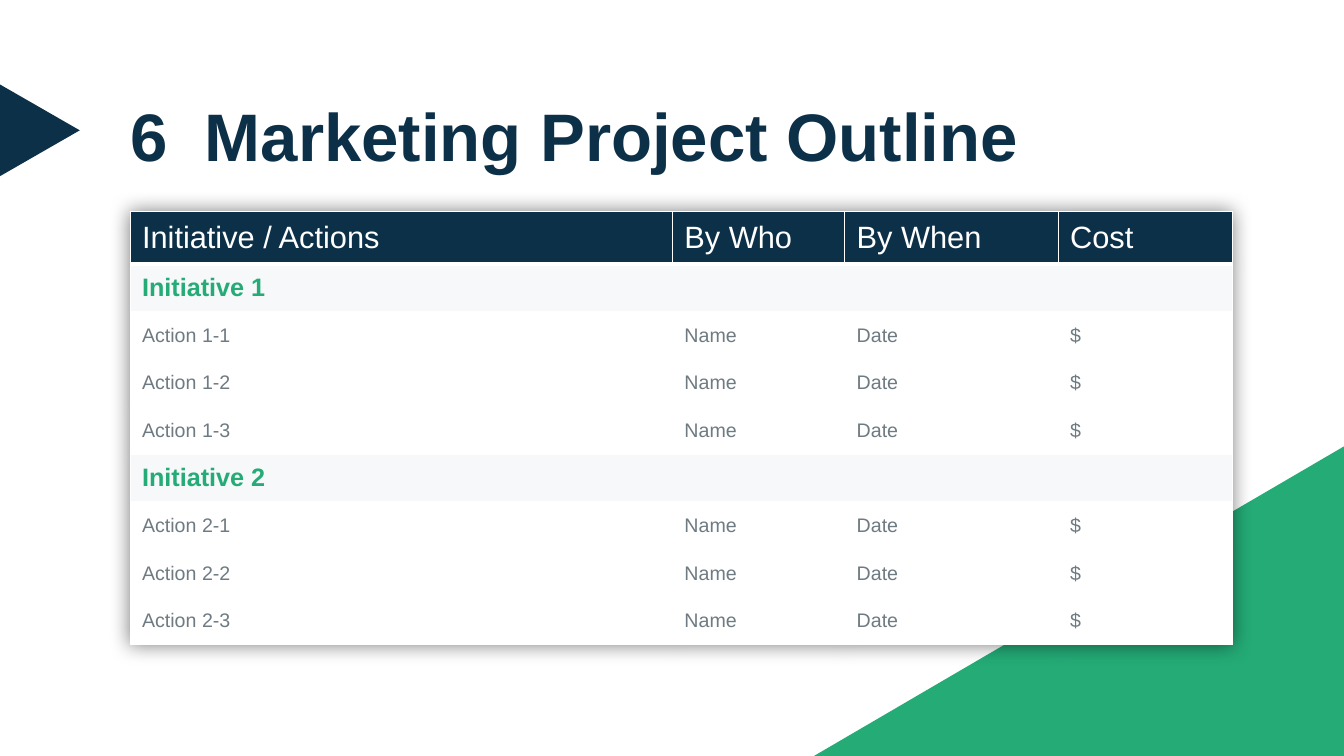
import dataclasses

import pptx
import pptx.dml.color
import pptx.enum.shapes
import pptx.enum.text
import pptx.oxml
import pptx.oxml.ns
import pptx.util
from pptx.util import Cm


@dataclasses.dataclass(frozen=True)
class Theme:
    font: str = "Arial"
    navy: str = "0D3049"
    green: str = "24AB76"
    grey: str = "6E7B82"
    pale: str = "F6F8FA"
    white: str = "FFFFFF"
    title_size: int = 48
    header_size: int = 22
    initiative_size: int = 18
    action_size: int = 14


@dataclasses.dataclass(frozen=True)
class Box:
    """Left, top, width and height in centimetres."""
    left: float
    top: float
    width: float
    height: float

    def lengths(self):
        return [Cm(value) for value in dataclasses.astuple(self)]


THEME = Theme()
SLIDE = Box(0, 0, 33.87, 19.05)
HEADERS = ["Initiative / Actions", "By Who", "By When", "Cost"]
COLUMN_WIDTHS = [13.67, 4.34, 5.38, 4.39]
HEADER_HEIGHT = 1.32
INITIATIVES = 2
ACTIONS = 3


def rgb(color):
    return pptx.dml.color.RGBColor.from_string(color)


def apply(target, formats):
    for name, value in formats.items():
        setattr(target, name, value)


def write(paragraph, text, size, color, bold=False):
    run = paragraph.add_run()
    run.text = text
    apply(run.font, {"name": THEME.font, "size": pptx.util.Pt(size), "bold": bold})
    run.font.color.rgb = rgb(color)


def make_element(xml):
    return pptx.oxml.parse_xml(xml.replace(" ", f' {pptx.oxml.ns.nsdecls("a")} ', 1))


# Triangles at the slide edges
def add_triangle(slide, box, preset, color):
    shape = slide.shapes.add_shape(preset, *box.lengths())
    shape.shadow.inherit = False
    shape.fill.solid()
    shape.fill.fore_color.rgb = rgb(color)
    shape.line.fill.background()
    return shape


def add_corner(slide, box):
    preset = pptx.enum.shapes.MSO_SHAPE.RIGHT_TRIANGLE
    corner = add_triangle(slide, box, preset, THEME.green)
    corner.element.spPr.xfrm.set("flipH", "1")


def add_pointer(slide, box):
    # A quarter turn swaps the sides about the centre of the box
    shift = (box.width - box.height) / 2
    upright = Box(box.left + shift, box.top - shift, box.height, box.width)
    preset = pptx.enum.shapes.MSO_SHAPE.ISOSCELES_TRIANGLE
    add_triangle(slide, upright, preset, THEME.navy).rotation = 90


# Title with its section number
def add_title(slide, box, number, text):
    title = slide.shapes.title
    apply(title, dict(zip(("left", "top", "width", "height"), box.lengths())))
    apply(title.text_frame, {
        "margin_left": 0, "margin_top": 0, "margin_right": 0, "margin_bottom": 0,
        "word_wrap": True,
        "auto_size": pptx.enum.text.MSO_AUTO_SIZE.NONE,
        "vertical_anchor": pptx.enum.text.MSO_ANCHOR.BOTTOM,
    })
    paragraph = title.text_frame.paragraphs[0]
    apply(paragraph, {"alignment": pptx.enum.text.PP_ALIGN.LEFT, "line_spacing": 0.9})
    tabs = f'<a:tabLst ><a:tab pos="{Cm(1.88)}" algn="l"/></a:tabLst>'
    paragraph.line_spacing = 0.9
    paragraph._p.get_or_add_pPr().append(make_element(tabs))
    write(paragraph, f"{number}\t{text}", THEME.title_size, THEME.navy, True)


# Table of initiatives and their actions
def format_cell(cell, fill, top=1, bottom=1):
    apply(cell, {
        "margin_left": Cm(0.3), "margin_right": Cm(0.3),
        "margin_top": Cm(0.15), "margin_bottom": Cm(0.15),
        "vertical_anchor": pptx.enum.text.MSO_ANCHOR.MIDDLE,
    })
    cell.fill.solid()
    cell.fill.fore_color.rgb = rgb(fill)
    properties = cell._tc.get_or_add_tcPr()
    for index, (side, width) in enumerate(zip("LRTB", (1, 1, top, bottom))):
        properties.insert(index, make_element(
            f'<a:ln{side} w="{pptx.util.Pt(width)}"><a:solidFill>'
            f'<a:srgbClr val="{THEME.white}"/></a:solidFill></a:ln{side}>'))


def add_table_shadow(table):
    table._tbl.tblPr.insert(0, make_element(
        f'<a:effectLst ><a:outerShdw blurRad="{Cm(0.5)}" dist="0" algn="ctr" rotWithShape="0">'
        '<a:srgbClr val="000000"><a:alpha val="50000"/></a:srgbClr>'
        '</a:outerShdw></a:effectLst>'))


def add_outline_table(slide, box):
    rows = [(HEADERS, THEME.header_size, THEME.white, False, THEME.navy)]
    for initiative in range(1, INITIATIVES + 1):
        rows.append(([f"Initiative {initiative}"], THEME.initiative_size,
                     THEME.green, True, THEME.pale))
        for action in range(1, ACTIONS + 1):
            rows.append(([f"Action {initiative}-{action}", "Name", "Date", "$"],
                         THEME.action_size, THEME.grey, False, THEME.white))

    table = slide.shapes.add_table(len(rows), len(HEADERS), *box.lengths()).table
    table.horz_banding = False
    add_table_shadow(table)
    for column, width in zip(table.columns, COLUMN_WIDTHS):
        column.width = Cm(width)
    body_height = (box.height - HEADER_HEIGHT) / (len(rows) - 1)

    for index, (texts, size, color, bold, fill) in enumerate(rows):
        table.rows[index].height = Cm(body_height if index else HEADER_HEIGHT)
        for cell in table.rows[index].cells:
            format_cell(cell, fill, top=3 if index == 1 else 1, bottom=1 if index else 3)
        if len(texts) == 1:
            table.cell(index, 0).merge(table.cell(index, len(HEADERS) - 1))
        for column, text in enumerate(texts):
            paragraph = table.cell(index, column).text_frame.paragraphs[0]
            write(paragraph, text, size, color, bold)


def build_outline_slide(presentation, box):
    slide = presentation.slides.add_slide(presentation.slide_layouts[5])
    left = box.left + 3.28
    add_corner(slide, Box(box.width - 13.44, box.height - 7.8, 13.44, 7.85))
    add_pointer(slide, Box(box.left, box.top + 2.13, 2.01, 2.31))
    add_title(slide, Box(left, box.top + 2.54, 27.3, 1.9), 6, "Marketing Project Outline")
    add_outline_table(slide, Box(left, box.top + 5.33, sum(COLUMN_WIDTHS), 10.92))


def main():
    presentation = pptx.Presentation()
    apply(presentation, {"slide_width": Cm(SLIDE.width), "slide_height": Cm(SLIDE.height)})
    build_outline_slide(presentation, SLIDE)
    presentation.save("out.pptx")


if __name__ == "__main__":
    main()
